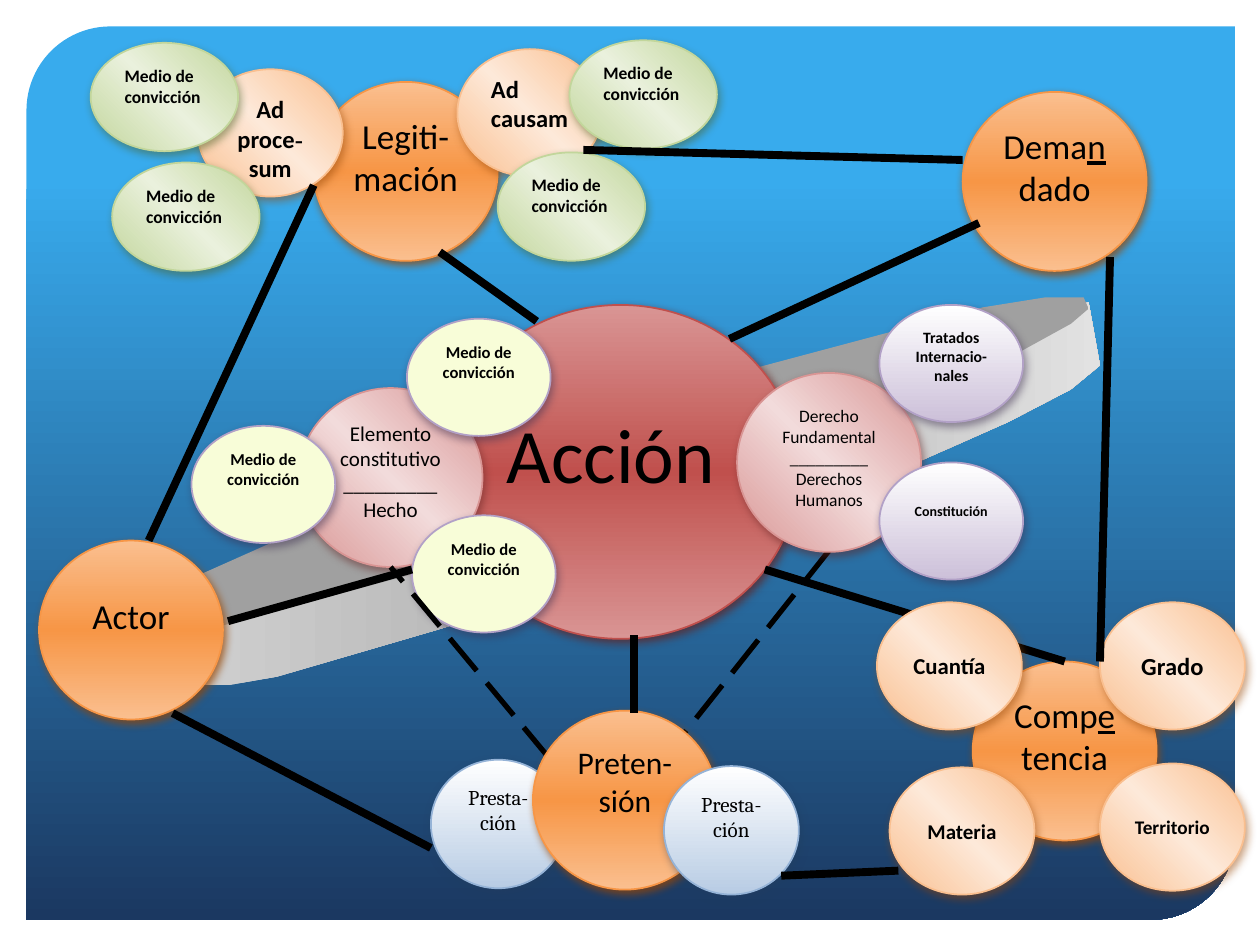
"""Build a one-slide concept map of the elements of a legal action."""
from dataclasses import dataclass

from lxml.etree import SubElement
from pptx import Presentation
from pptx.dml.color import RGBColor as RGB
from pptx.enum.dml import MSO_LINE_DASH_STYLE as DASH
from pptx.enum.shapes import MSO_CONNECTOR as CONNECTOR
from pptx.enum.shapes import MSO_SHAPE as SHAPE
from pptx.enum.text import MSO_ANCHOR as ANCHOR
from pptx.enum.text import PP_ALIGN as ALIGN
from pptx.oxml.ns import qn
from pptx.util import Inches, Pt


@dataclass(frozen=True)
class Bubble:
    """Look of one family of ellipses."""
    size: tuple
    stops: tuple
    angle: int
    line: str
    shadow: str
    alpha: int
    text: float


class Theme:
    """Colours, fonts and type sizes."""
    font, serif, hyphen = "Calibri", "Cambria", "Times New Roman"
    ink = "000000"
    sky = ((17, "38ABED"), (100, "1B3861"))
    band_side = ((0, "CFCFCF"), (50, "ABABAB"), (100, "E2E2E2"))
    band_top = ((0, "A0A0A0"), (100, "A0A0A0"))
    solid, dashed = 4.5, 3
    core = Bubble((28.3, 26.5), ((0, "D99594"), (50, "C0504D"), (100, "D99594")),
                  90, "C0504D", "622423", 75, 44)
    hub = Bubble((14.6, 14.2), ((0, "FABF8F"), (50, "F79646"), (100, "FABF8F")),
                 90, "F79646", "974706", 75, 20)
    aspect = Bubble((11.5, 10.1), ((0, "FABF8F"), (50, "FDE9D9"), (100, "FABF8F")),
                    315, "FABF8F", "974706", 50, 14)
    ground = Bubble((14.6, 14.2), ((0, "D99594"), (50, "F2DBDB"), (100, "D99594")),
                    315, "D99594", "622423", 50, 12)
    law = Bubble((11.4, 9.3), ((0, "FFFFFF"), (100, "CCC0D9")),
                 90, "B2A1C7", "3F3151", 50, 9)
    proof = Bubble((11.4, 9.3), ((0, "F8FDD8"), (100, "F8FDD8")),
                   90, "B2A1C7", "3F3151", 50, 9.5)
    standing = Bubble((11.7, 8.6), ((0, "C2D69B"), (50, "EAF1DD"), (100, "C2D69B")),
                      315, "C2D69B", "4E6128", 50, 10)
    claim = Bubble((10.7, 10.2), ((0, "FFFFFF"), (100, "B8CCE4")),
                   90, "95B3D7", "243F60", 50, 12)
    bold = (aspect, law, proof, standing)


class Map:
    """Draw on a grid of 100 columns by 75 rows."""

    def __init__(self, prs, theme):
        self.theme = theme
        self.s = prs.slides.add_slide(prs.slide_layouts[6])
        self.col, self.row = prs.slide_width / 100, prs.slide_height / 75

    def place(self, x, y):
        return round(x * self.col), round(y * self.row)

    def gradient(self, sp, stops, angle):
        sp.fill.background()
        none = sp.element.spPr.find(qn("a:noFill"))
        grad = none.makeelement(qn("a:gradFill"), {"rotWithShape": "1"})
        none.getparent().replace(none, grad)
        steps = SubElement(grad, qn("a:gsLst"))
        for pos, color in stops:
            step = SubElement(steps, qn("a:gs"), pos=str(pos * 1000))
            SubElement(step, qn("a:srgbClr"), val=color)
        SubElement(grad, qn("a:lin"), ang=str(angle * 60000), scaled="0")
        sp.shadow.inherit = False

    def backdrop(self, x, y, w, h):
        sp = self.s.shapes.add_shape(SHAPE.ROUND_2_DIAG_RECTANGLE,
                                     *self.place(x, y), *self.place(w, h))
        sp.adjustments[0], sp.adjustments[1] = 0.094, 0
        self.gradient(sp, self.theme.sky, 90)
        sp.line.fill.background()

    def band(self, points, stops):
        start, *rest = [self.place(*point) for point in points]
        builder = self.s.shapes.build_freeform(*start)
        builder.add_line_segments(rest, close=True)
        sp = builder.convert_to_shape()
        self.gradient(sp, stops, 0)
        sp.line.fill.background()

    def link(self, start, end, dashed=False):
        c = self.s.shapes.add_connector(CONNECTOR.STRAIGHT,
                                        *self.place(*start), *self.place(*end))
        c.line.color.rgb = RGB.from_string(self.theme.ink)
        c.line.width = Pt(self.theme.dashed if dashed else self.theme.solid)
        if dashed:
            c.line.dash_style = DASH.LONG_DASH
        SubElement(c.element.spPr, qn("a:effectLst"))

    def bubble(self, kind, x, y, text, size=None, align=ALIGN.CENTER,
               drop=0, middle=False, mark=None):
        """Draw an ellipse; every second piece between bars is marked."""
        sp = self.s.shapes.add_shape(SHAPE.OVAL, *self.place(x, y),
                                     *self.place(*kind.size))
        self.gradient(sp, kind.stops, kind.angle)
        sp.line.color.rgb = RGB.from_string(kind.line)
        sp.line.width = Pt(1)
        effects = sp.element.spPr.find(qn("a:effectLst"))
        shadow = SubElement(effects, qn("a:outerShdw"), blurRad=str(Pt(5)),
                            dist=str(Pt(2.3)), dir=str(65 * 60000),
                            algn="ctr", rotWithShape="0")
        color = SubElement(shadow, qn("a:srgbClr"), val=kind.shadow)
        SubElement(color, qn("a:alpha"), val=str(kind.alpha * 1000))
        tf = sp.text_frame
        tf.word_wrap = True
        tf.vertical_anchor = ANCHOR.MIDDLE if middle else ANCHOR.TOP
        tf.margin_top = Pt(3.6 + drop)
        for i, line in enumerate(text.split("\n")):
            p = tf.add_paragraph() if i else tf.paragraphs[0]
            p.alignment = align
            for j, piece in enumerate(line.split("|")):
                r = p.add_run()
                r.text = piece
                f = r.font
                f.size = Pt(size or kind.text)
                f.bold = kind in self.theme.bold
                f.color.rgb = RGB.from_string(self.theme.ink)
                f.name = self.theme.serif if kind is self.theme.claim else self.theme.font
                if j % 2 and mark == "underline":
                    f.underline = True
                elif j % 2:
                    f.name = self.theme.hyphen


def main():
    prs = Presentation()
    prs.slide_width, prs.slide_height = Inches(10), Inches(7.5)
    t = Theme()
    m = Map(prs, t)
    proof = "Medio de convicción"

    m.backdrop(2.1, 2.1, 95.9, 70.9)
    m.link((52.4, 60.6), (65.8, 43.7), dashed=True)
    m.band([(15, 46), (15, 54.4), (18, 54.4), (22, 53.7), (35, 49.9), (55, 43.5),
            (73, 36.6), (80, 33.5), (85, 30.9), (87.3, 29), (86.4, 24)], t.band_side)
    m.band([(15, 46), (21.5, 43.1), (40, 36), (60, 29.2), (78, 24.4), (83, 23.6),
            (86, 23.6), (86.4, 24.5), (85, 25.7), (81, 27.9), (73, 31.2),
            (55, 38.5), (33, 45.5), (17.5, 49.7), (15, 50)], t.band_top)

    m.bubble(t.core, 35.1, 24.2, "Acción", align=ALIGN.LEFT, drop=26.8)
    m.bubble(t.hub, 76.4, 7.3, "Dema|n|dado", mark="underline")
    m.bubble(t.hub, 77.2, 52.5, "Comp|e|tencia", mark="underline")
    for x, y, name, size in ((87.3, 47.8, "Grado", 14), (70.6, 60.9, "Materia", 12),
                             (87.3, 60.6, "Territorio", 11)):
        m.bubble(t.aspect, x, y, name, size, middle=True)
    m.bubble(t.ground, 23.7, 30.8, "Elemento constitutivo\n_________Hecho")
    m.bubble(t.ground, 58.5, 29.6, "Derecho Fundamental\n_________\nDerechos Humanos", 10)
    m.bubble(t.law, 69.8, 24.2, "Tratados Internacio-nales")
    m.bubble(t.law, 69.8, 36.7, "Constitución", 8, drop=9.8)
    for x, y in ((32.3, 25.3), (15.2, 33.8), (32.7, 40.9)):
        m.bubble(t.proof, x, y, proof)

    m.bubble(t.hub, 24.9, 6.5, "Legiti-mación")
    m.bubble(t.aspect, 36.3, 3.9, "Ad causam", align=ALIGN.LEFT)
    for x, y in ((45.2, 3.2), (39.5, 12.1)):
        m.bubble(t.standing, x, y, proof, align=ALIGN.LEFT)
    m.bubble(t.aspect, 15.7, 5.5, "Ad proce|-|sum", mark="hyphen")
    for x, y in ((7.2, 3.4), (8.9, 12.9)):
        m.bubble(t.standing, x, y, proof, align=ALIGN.LEFT)

    m.bubble(t.hub, 3.1, 42.9, "Actor", drop=12.2)
    m.bubble(t.claim, 34.2, 60.3, "Presta-ción")
    m.link((43.7, 60.3), (31, 45), dashed=True)
    m.bubble(t.hub, 42.3, 56.4, "Preten-sión", 18)
    m.bubble(t.claim, 52.7, 60.8, "Presta-ción")
    m.link((60.7, 45.2), (84.5, 52.5))
    m.bubble(t.aspect, 69.6, 47.8, "Cuantía", 13, middle=True)
    for start, end in (
            ((77.7, 17.7), (57.9, 26.9)), ((34.9, 20), (42.6, 25.5)),
            ((32.7, 45.2), (18.1, 49.3)), ((50.3, 50.4), (50.3, 56.6)),
            ((88.1, 20.4), (87.3, 52.5)), ((76.4, 12.7), (46.3, 11.9)),
            ((24.9, 14.7), (11.8, 42.9)), ((13.7, 56.6), (34.2, 67.3)),
            ((62, 69.5), (71.3, 69.1))):
        m.link(start, end)
    prs.save("out.pptx")


if __name__ == "__main__":
    main()
